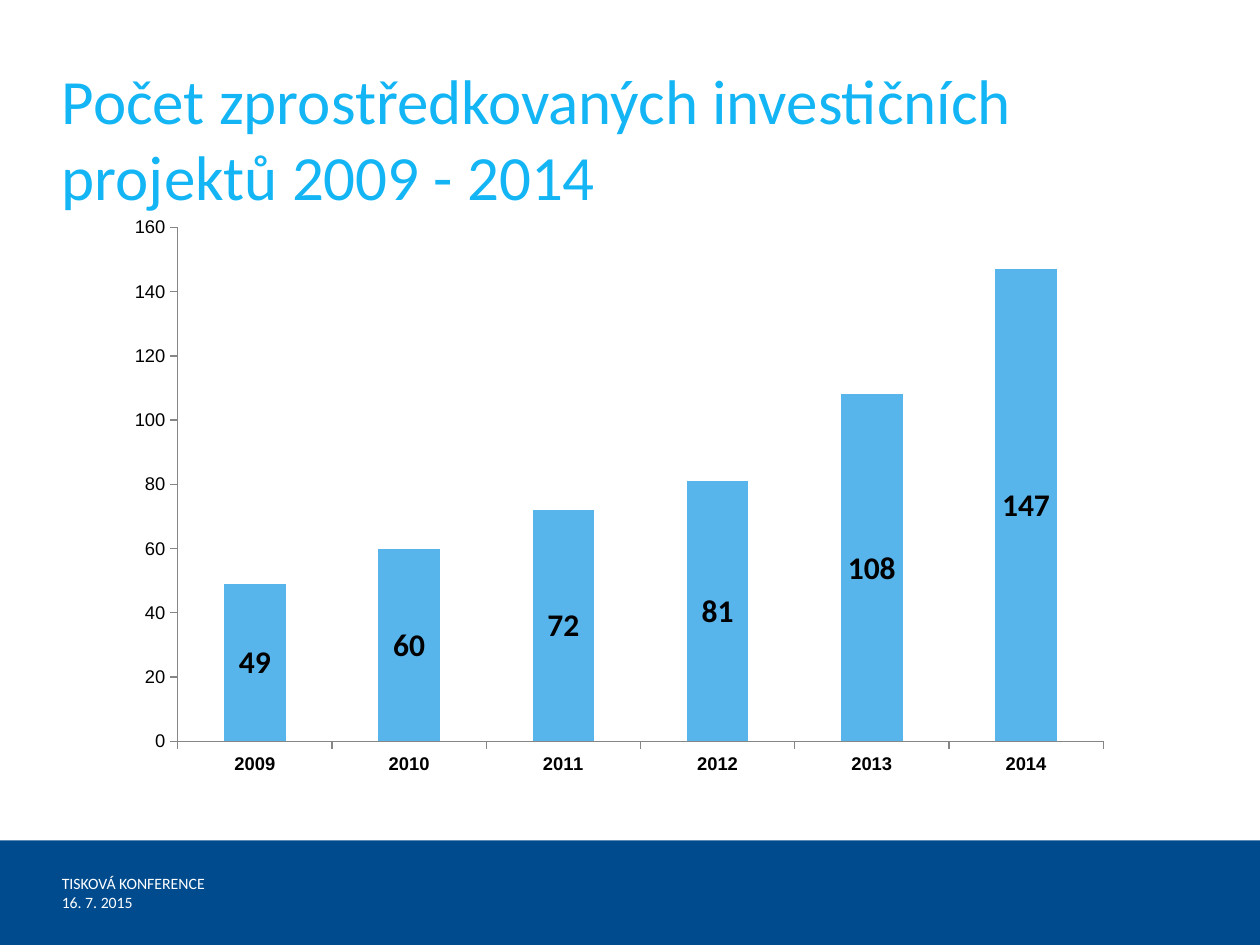
"""Build a slide with a column chart of investment projects per year."""
from dataclasses import dataclass

from pptx import Presentation
from pptx.chart.data import CategoryChartData
from pptx.dml.color import RGBColor
from pptx.enum.chart import XL_CHART_TYPE as ChartType
from pptx.enum.chart import XL_LABEL_POSITION as LabelPos
from pptx.enum.chart import XL_TICK_MARK as Tick
from pptx.enum.shapes import MSO_SHAPE as Shape
from pptx.enum.text import MSO_ANCHOR as Anchor
from pptx.oxml import parse_xml
from pptx.oxml.ns import nsdecls
from pptx.util import Inches, Pt

NAVY = RGBColor(0x00, 0x4B, 0x8D)
CYAN = RGBColor(0x13, 0xB5, 0xF4)
SKY = RGBColor(0x58, 0xB5, 0xEC)
GREY = RGBColor(0x86, 0x86, 0x86)
WHITE = RGBColor(0xFF, 0xFF, 0xFF)
BLACK = RGBColor(0x00, 0x00, 0x00)

PROJECTS = {"2009": 49, "2010": 60, "2011": 72, "2012": 81, "2013": 108, "2014": 147}
PLOT = {"x": 0.108, "y": 0.042, "w": 0.861, "h": 0.836}


@dataclass
class Box:
    left: float
    top: float
    width: float
    height: float

    def emu(self):
        return [Inches(v) for v in (self.left, self.top, self.width, self.height)]


def set_font(font, size: float, color: RGBColor, name: str = "Calibri", bold: bool = False):
    font.size, font.name, font.bold = Pt(size), name, bold
    font.color.rgb = color


def add_text(s, box: Box, text: str, *, size: float, color: RGBColor, anchor=Anchor.TOP):
    tf = s.shapes.add_textbox(*box.emu()).text_frame
    tf.word_wrap = True
    tf.vertical_anchor = anchor
    tf.margin_left = tf.margin_right = tf.margin_top = tf.margin_bottom = 0
    tf.text = text
    for p in tf.paragraphs:
        for r in p.runs:
            set_font(r.font, size, color)


def style_axis(axis, bold: bool = False):
    axis.has_major_gridlines = False
    axis.major_tick_mark = Tick.OUTSIDE
    axis.minor_tick_mark = Tick.NONE
    axis.format.line.color.rgb = GREY
    axis.format.line.width = Pt(0.75)
    set_font(axis.tick_labels.font, 10.5, BLACK, "Arial", bold)


def set_plot_layout(chart):
    modes = '<c:layoutTarget val="inner"/><c:xMode val="edge"/><c:yMode val="edge"/>'
    sizes = "".join(f'<c:{key} val="{val}"/>' for key, val in PLOT.items())
    layout = parse_xml(
        f'<c:layout {nsdecls("c")}><c:manualLayout>{modes}{sizes}</c:manualLayout></c:layout>'
    )
    area = chart.element.chart.plotArea
    for old in area.xpath("c:layout"):
        area.remove(old)
    area.insert(0, layout)


def add_column_chart(s, box: Box, values: dict[str, int]):
    data = CategoryChartData()
    data.categories = list(values)
    data.add_series("Series 1", list(values.values()))
    chart = s.shapes.add_chart(ChartType.COLUMN_STACKED, *box.emu(), data).chart
    chart.has_legend = chart.has_title = False
    set_font(chart.font, 10, BLACK)
    set_plot_layout(chart)

    style_axis(chart.category_axis, bold=True)
    axis = chart.value_axis
    style_axis(axis)
    axis.minimum_scale, axis.maximum_scale, axis.major_unit = 0, 160, 20
    axis.tick_labels.number_format = "#,##0"
    axis.tick_labels.number_format_is_linked = False

    plot = chart.plots[0]
    plot.gap_width, plot.overlap, plot.vary_by_categories = 150, 100, False
    series = plot.series[0]
    series.format.fill.solid()
    series.format.fill.fore_color.rgb = SKY
    labels = series.data_labels
    labels.show_value = True
    labels.position = LabelPos.CENTER
    set_font(labels.font, 18, BLACK, bold=True)


def main():
    prs = Presentation()
    prs.slide_width, prs.slide_height = Inches(10), Inches(7.5)
    s = prs.slides.add_slide(prs.slide_layouts[6])
    s.background.fill.solid()
    s.background.fill.fore_color.rgb = NAVY

    sp = s.shapes.add_shape(Shape.RECTANGLE, *Box(0, 0, 10, 6.67).emu())
    sp.shadow.inherit = False
    sp.fill.solid()
    sp.fill.fore_color.rgb = WHITE
    sp.line.fill.background()

    add_text(s, Box(0.49, 6.67, 2.05, 0.83), "TISKOVÁ KONFERENCE\n16. 7. 2015",
             size=9, color=WHITE, anchor=Anchor.MIDDLE)
    add_text(s, Box(0.49, 0.49, 9.01, 1.21),
             "Počet zprostředkovaných investičních projektů 2009 - 2014", size=36, color=CYAN)
    add_column_chart(s, Box(0.49, 1.6, 8.53, 4.88), PROJECTS)
    prs.save("out.pptx")


if __name__ == "__main__":
    main()
